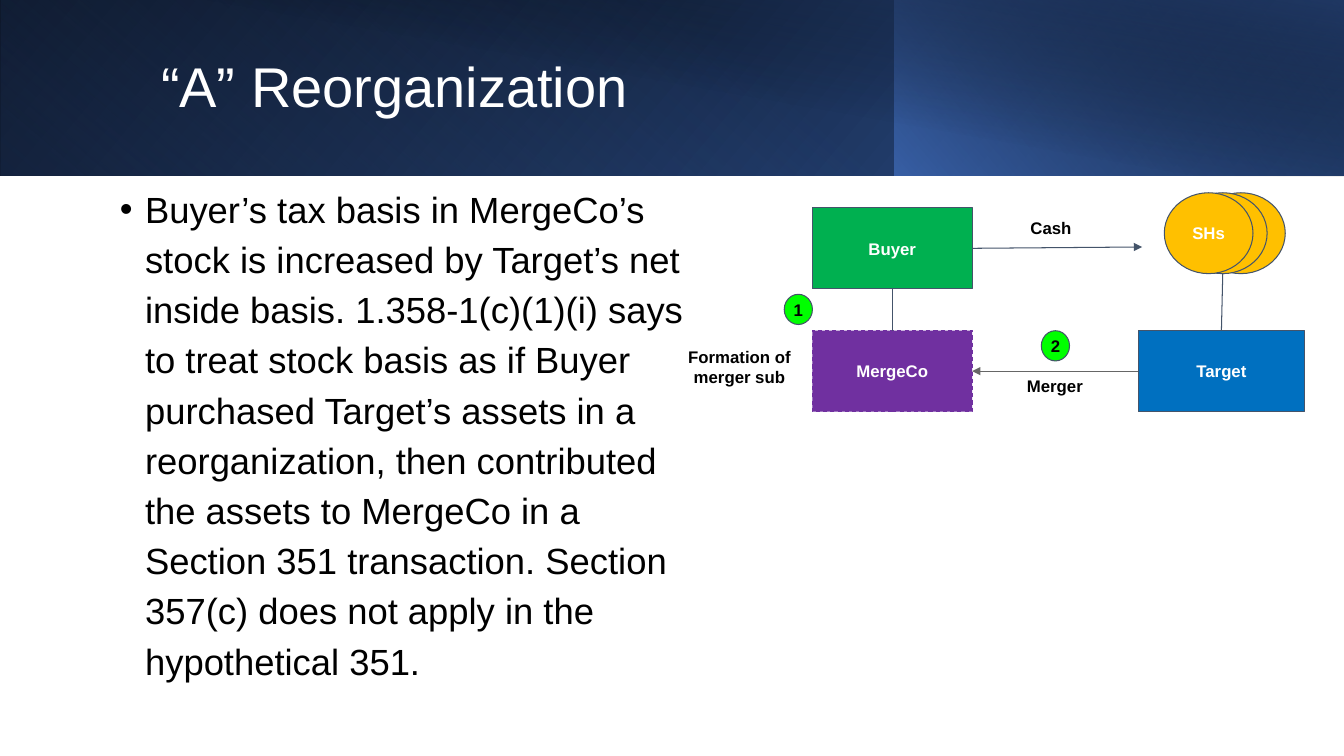
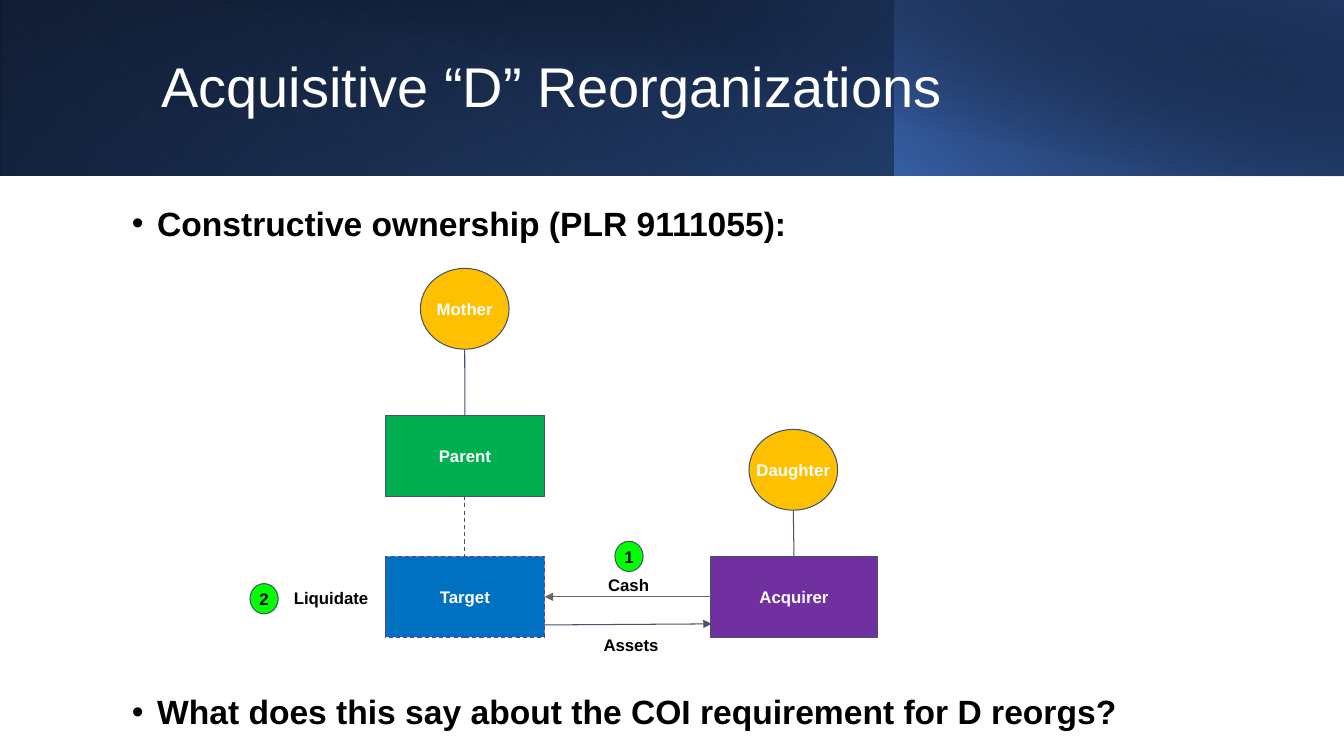
import dataclasses
import typing

import lxml.etree
import pptx
import pptx.dml.color
import pptx.enum.dml
import pptx.enum.shapes
import pptx.enum.text
import pptx.oxml.ns
import pptx.util

HUES = {
    "white": "FFFFFF", "black": "000000", "slate": "44546A", "grey": "666666",
    "green": "00B050", "plum": "7030A0", "blue": "0070C0", "gold": "FFC000",
    "lime": "00FF00", "royal": "4472C4", "deep": "2F5597", "navy": "203864",
}
FONT = "Arial"
WIDE, HIGH = pptx.util.Inches(13.333), pptx.util.Inches(7.5)

# Sizes and places are percent shares of the slide
BOX_W, BOX_H, END_W = 11.88, 10.7, 12.4
DISC_W, DOT_W, DOT_H = 6.6, 4 * 0.525, 4
TAG_W, TAG_H = 10.88, 4
STEP = 24.23  # from the left box to the right box

KIND = pptx.enum.shapes.MSO_SHAPE
ALIGN = pptx.enum.text.PP_ALIGN
ANCHOR = pptx.enum.text.MSO_ANCHOR
End = tuple[str, int] | tuple[float, float]  # node and side, or a point


@dataclasses.dataclass
class Band:
    left: float
    width: float
    height: float
    angle: int
    stops: list[tuple[int, str, int]]  # place, hue, opacity
    flip: bool = True
    turn: int = 0


@dataclasses.dataclass
class Node:
    name: str
    left: float
    top: float
    hue: str
    width: float = BOX_W
    height: float = BOX_H
    kind: typing.Any = KIND.RECTANGLE
    edge: str = "slate"
    dash: bool = False
    ink: str = "white"
    inset: float = 0.1


@dataclasses.dataclass
class Link:
    start: End
    end: End
    arrow: bool = False
    dash: bool = False
    hue: str = "slate"


@dataclasses.dataclass
class Tag:
    text: str
    left: float
    top: float


@dataclasses.dataclass
class Point:
    text: str
    left: float
    top: float
    width: float
    height: float
    size: int
    bold: bool = False
    pitch: float = 1.0


@dataclasses.dataclass
class Page:
    title: str
    points: list[Point]
    nodes: list[Node]
    links: list[Link]
    tags: list[Tag]


def disc(name: str, left: float, top: float) -> Node:
    return Node(name, left, top, "gold", DISC_W, kind=KIND.FLOWCHART_CONNECTOR)


def dot(name: str, left: float, top: float) -> Node:
    return Node(name, left, top, "lime", DOT_W, DOT_H, KIND.OVAL,
                ink="black", inset=0)


BANDS = [
    Band(0, 100, 23.2, 140, [(0, "black", 100), (100, "deep", 100)]),
    Band(0, 66.6, 23.2, 230, [(20, "royal", 0), (100, "navy", 55)], turn=180),
    Band(66.53, 33.47, 23.2, 220, [(0, "royal", 66), (100, "black", 30)]),
    Band(3.75, 96.25, 23.33, 280, [(50, "black", 0), (99, "navy", 52)], False),
]

LEFT_A, TOP_A, LOW_A = 60.45, 27.5, 43.75
LEFT_D, TOP_D, LOW_D = 28.65, 54.93, 73.6

PAGES = [
    Page(
        "“A” Reorganization",
        [Point("Buyer’s tax basis in MergeCo’s stock is increased by Target’s "
               "net inside basis. 1.358-1(c)(1)(i) says to treat stock basis as "
               "if Buyer purchased Target’s assets in a reorganization, then "
               "contributed the assets to MergeCo in a Section 351 transaction. "
               "Section 357(c) does not apply in the hypothetical 351.",
               8.18, 23.2, 44.03, 76.8, 26, pitch=1.15)],
        [disc("", 89.03, 25.5),
         disc("", 87.68, 25.5),
         disc("SHs", 86.63, 25.5),
         Node("Buyer", LEFT_A, TOP_A, "green"),
         Node("MergeCo", LEFT_A, LOW_A, "plum", edge="plum", dash=True),
         Node("Target", LEFT_A + STEP, LOW_A, "blue", END_W),
         dot("1", 58.35, 38.93),
         dot("2", 77.48, LOW_A)],
        [Link(("Buyer", 2), ("MergeCo", 0)),
         Link((90.98, 36.17), ("Target", 0)),
         Link(("Target", 1), ("MergeCo", 3), arrow=True, hue="grey"),
         Link(("Buyer", 3), (84.98, 32.67), arrow=True)],
        [Tag("Formation of merger sub", 49.58, 44.53),
         Tag("Merger", 73.05, 48.4),
         Tag("Cash", 72.76, TOP_A)],
    ),
    Page(
        "Acquisitive “D” Reorganizations",
        [Point("Constructive ownership (PLR 9111055):",
               9.08, 26.13, 81.9, 7, 24, True),
         Point("What does this say about the COI requirement for D reorgs?",
               9.08, 90.8, 81.9, 7, 24, True)],
        [Node("Parent", LEFT_D, TOP_D, "green"),
         Node("Target", LEFT_D, LOW_D, "blue", edge="plum", dash=True),
         Node("Acquirer", LEFT_D + STEP, LOW_D, "plum", END_W),
         disc("Daughter", 55.73, 56.8),
         disc("Mother", 31.28, 35.5),
         dot("1", 45.75, 71.6),
         dot("2", 18.6, 77.2)],
        [Link(("Mother", 2), ("Parent", 0)),
         Link(("Parent", 2), ("Target", 0), dash=True),
         Link(("Daughter", 2), ("Acquirer", 0)),
         Link(("Acquirer", 1), ("Target", 3), arrow=True, hue="grey"),
         Link((40.35, 82.67), (52.95, 82.53), arrow=True)],
        [Tag("Liquidate", 19.2, 76.4),
         Tag("Cash", 41.33, 74.67),
         Tag("Assets", 41.51, 82.67)],
    ),
]


def across(share: float) -> int:
    return round(WIDE * share / 100)


def down(share: float) -> int:
    return round(HIGH * share / 100)


def area(left: float, top: float, width: float, height: float) -> tuple:
    return across(left), down(top), across(width), down(height)


def color(hue: str) -> pptx.dml.color.RGBColor:
    return pptx.dml.color.RGBColor.from_string(HUES[hue])


def child(root: typing.Any, tag: str, **attrs: typing.Any) -> typing.Any:
    texts = {key: str(value) for key, value in attrs.items()}
    return lxml.etree.SubElement(root, pptx.oxml.ns.qn(tag), texts)


def write(shape: typing.Any, text: str, size: int, ink: str,
          bold: bool = False, inset: float | None = None) -> typing.Any:
    """Fill a shape with one styled paragraph and return the paragraph."""
    frame = shape.text_frame
    frame.word_wrap = True
    if inset is not None:
        for side in ("left", "top", "right", "bottom"):
            setattr(frame, f"margin_{side}", pptx.util.Inches(inset))
    para = frame.paragraphs[0]
    para.text = text
    para.font.name, para.font.size = FONT, pptx.util.Pt(size)
    para.font.bold, para.font.color.rgb = bold, color(ink)
    return para


def draw_band(slide: typing.Any, band: Band) -> None:
    shape = slide.shapes.add_shape(
        KIND.RECTANGLE, *area(band.left, 0, band.width, band.height))
    shape.shadow.inherit = False
    shape.line.fill.background()
    shape.rotation = band.turn
    shape.fill.background()
    props = shape._element.spPr
    if band.flip:
        props.xfrm.set("flipH", "1")
    # Gradient with see-through stops takes the place of the empty fill
    grad = child(props, "a:gradFill", rotWithShape=1)
    stops = child(grad, "a:gsLst")
    for place, hue, solid in band.stops:
        stop = child(stops, "a:gs", pos=place * 1000)
        tint = child(stop, "a:srgbClr", val=HUES[hue])
        child(tint, "a:alpha", val=solid * 1000)
    child(grad, "a:lin", ang=band.angle * 60000, scaled=0)
    props.replace(props.find(pptx.oxml.ns.qn("a:noFill")), grad)


def draw_title(slide: typing.Any, text: str) -> None:
    box = slide.shapes.add_textbox(*area(11.25, 4.27, 81.15, 15.07))
    write(box, text, 40, "white").line_spacing = 0.9
    box.text_frame.vertical_anchor = ANCHOR.MIDDLE


def draw_point(slide: typing.Any, point: Point) -> None:
    box = slide.shapes.add_textbox(
        *area(point.left, point.top, point.width, point.height))
    para = write(box, point.text, point.size, "black", point.bold)
    para.line_spacing = point.pitch
    props = para._p.get_or_add_pPr()
    indent = pptx.util.Inches(0.25)
    props.set("marL", str(indent))
    props.set("indent", str(-indent))
    bullet = [lxml.etree.Element(pptx.oxml.ns.qn("a:buFont"), typeface=FONT),
              lxml.etree.Element(pptx.oxml.ns.qn("a:buChar"), char="•")]
    spot = props.index(props.find(pptx.oxml.ns.qn("a:defRPr")))
    props[spot:spot] = bullet


def style_line(line: typing.Any, hue: str, dash: bool) -> None:
    line.color.rgb = color(hue)
    line.width = pptx.util.Pt(0.75)
    if dash:
        line.dash_style = pptx.enum.dml.MSO_LINE.DASH


def draw_node(slide: typing.Any, node: Node) -> typing.Any:
    shape = slide.shapes.add_shape(
        node.kind, *area(node.left, node.top, node.width, node.height))
    shape.shadow.inherit = False
    shape.fill.solid()
    shape.fill.fore_color.rgb = color(node.hue)
    style_line(shape.line, node.edge, node.dash)
    if node.name:
        para = write(shape, node.name, 12, node.ink, True, node.inset)
        para.alignment = ALIGN.CENTER
        shape.text_frame.vertical_anchor = ANCHOR.MIDDLE
        shape.text_frame.word_wrap = node.kind == KIND.RECTANGLE
    return shape


def draw_tag(slide: typing.Any, tag: Tag) -> None:
    box = slide.shapes.add_textbox(*area(tag.left, tag.top, TAG_W, TAG_H))
    write(box, tag.text, 12, "black", True, 0.1).alignment = ALIGN.CENTER


def locate(end: End, shapes: dict[str, typing.Any]) -> tuple[int, int]:
    if not isinstance(end[0], str):
        return across(end[0]), down(end[1])
    shape = shapes[end[0]]
    fx, fy = [(0.5, 0), (0, 0.5), (0.5, 1), (1, 0.5)][end[1]]
    return (round(shape.left + fx * shape.width),
            round(shape.top + fy * shape.height))


def draw_link(slide: typing.Any, link: Link,
              shapes: dict[str, typing.Any]) -> None:
    line = slide.shapes.add_connector(
        pptx.enum.shapes.MSO_CONNECTOR.STRAIGHT,
        *locate(link.start, shapes), *locate(link.end, shapes))
    for end, join in ((link.start, line.begin_connect),
                      (link.end, line.end_connect)):
        shape = shapes.get(end[0])
        if shape is not None and shape.auto_shape_type == KIND.RECTANGLE:
            join(shape, end[1])
    style_line(line.line, link.hue, link.dash)
    if link.arrow:
        child(line.line._get_or_add_ln(), "a:tailEnd", type="triangle")
    child(line._element.spPr, "a:effectLst")


def draw_page(deck: typing.Any, page: Page) -> None:
    slide = deck.slides.add_slide(deck.slide_layouts[6])
    for band in BANDS:
        draw_band(slide, band)
    draw_title(slide, page.title)
    for point in page.points:
        draw_point(slide, point)
    shapes = {node.name: draw_node(slide, node) for node in page.nodes}
    for link in page.links:
        draw_link(slide, link, shapes)
    for tag in page.tags:
        draw_tag(slide, tag)


def main() -> None:
    deck = pptx.Presentation()
    deck.slide_width, deck.slide_height = WIDE, HIGH
    for page in PAGES:
        draw_page(deck, page)
    deck.save("out.pptx")


if __name__ == "__main__":
    main()
